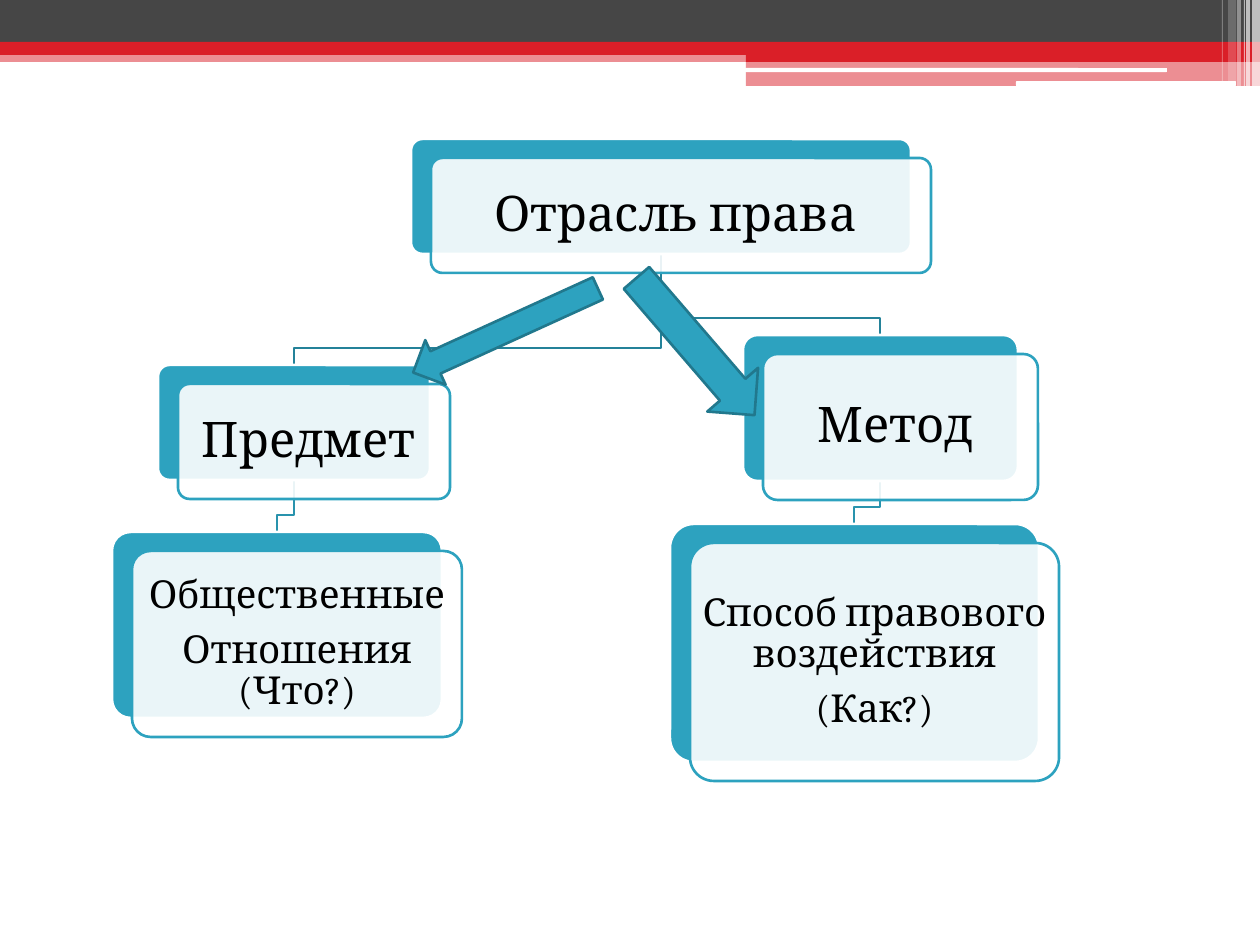
from lxml import etree
from pptx import Presentation
from pptx import util as u
from pptx.dml.color import RGBColor
from pptx.enum import shapes as sh, text as tx
from pptx.oxml.ns import qn

SCALE = 914400 / 126  # EMU per px
COLORS = {
    "white": "FFFFFF", "black": "000000", "gray": "464646", "red": "DA1F28",
    "teal": "2DA2BF", "arrow_edge": "21788D",
    "upper_link": "248299", "lower_link": "2993AD",
}
RECT = sh.MSO_SHAPE.RECTANGLE
ROUND = sh.MSO_SHAPE.ROUNDED_RECTANGLE
CORNER = 0.1
SHIFT_X, SHIFT_Y = 20, 19  # front panel of a card against its back panel
BEND = 17  # bend of a link above its child card


def px(n):
    return u.Emu(round(n * SCALE))


class Diagram:
    font = "Cambria"
    line_width = u.Pt(1.5)

    def __init__(self, slide):
        self.slide = slide

    def outline(self, shape, color):
        shape.line.color.rgb = RGBColor.from_string(COLORS[color])
        shape.line.width = self.line_width

    def block(self, kind, box, fill, edge=None, alpha=100, corner=None):
        shape = self.slide.shapes.add_shape(kind, *map(px, box))
        shape.shadow.inherit = False
        shape.fill.solid()
        shape.fill.fore_color.rgb = RGBColor.from_string(COLORS[fill])
        if alpha < 100:
            color = shape.fill._xPr.find(qn("a:solidFill"))[0]
            etree.SubElement(color, qn("a:alpha")).set("val", str(alpha * 1000))
        if edge:
            self.outline(shape, edge)
        else:
            shape.line.fill.background()
        if corner is not None:
            shape.adjustments[0] = corner
        return shape

    def card(self, box, words, size, inset):
        x, y, w, h = box
        self.block(ROUND, box, "teal", "white", corner=CORNER)
        panel = self.block(ROUND, (x + SHIFT_X, y + SHIFT_Y, w, h), "white", "teal", 90, CORNER)
        frame = panel.text_frame
        frame.word_wrap = True
        frame.vertical_anchor = tx.MSO_ANCHOR.MIDDLE
        # The rounded corner already insets the text area
        margin = px(inset - 0.29 * CORNER * h)
        frame.margin_left = frame.margin_right = margin
        frame.margin_top = frame.margin_bottom = margin
        frame.text = words
        for paragraph in frame.paragraphs:
            paragraph.alignment = tx.PP_ALIGN.CENTER
            paragraph.line_spacing = 0.9
            paragraph.space_after = u.Pt(round(0.35 * size, 1))
            for run in paragraph.runs:
                run.font.name = self.font
                run.font.size = u.Pt(size)
                run.font.color.rgb = RGBColor.from_string(COLORS["black"])

    def link(self, parent, child, color):
        start_x, start_y = parent[0] + parent[2] / 2, parent[1] + parent[3]
        end_x, end_y = child[0] + child[2] / 2, child[1]
        bend_y = end_y - BEND
        builder = self.slide.shapes.build_freeform(start_x, start_y, scale=SCALE)
        builder.add_line_segments(
            [(start_x, bend_y), (end_x, bend_y), (end_x, end_y)], close=False)
        elbow = builder.convert_to_shape()
        elbow.shadow.inherit = False
        elbow.fill.background()
        self.outline(elbow, color)

    def arrow(self, box, angle):
        self.block(sh.MSO_SHAPE.DOWN_ARROW, box, "teal", "arrow_edge").rotation = angle


def main():
    deck = Presentation()
    deck.slide_width, deck.slide_height = px(1260), px(945)
    diagram = Diagram(deck.slides.add_slide(deck.slide_layouts[6]))

    # Header bands
    for box, fill, alpha in (
        ((0, 51, 1260, 11), "red", 50),
        ((0, 0, 1260, 43), "gray", 100),
        ((0, 42, 1260, 13), "red", 100),
        ((746, 49, 514, 13), "red", 100),
        ((746, 62, 514, 24), "red", 50),
    ):
        diagram.block(RECT, box, fill, alpha=alpha)
    for box in ((745, 68, 422, 4), (1016, 81, 220, 5)):
        diagram.block(ROUND, box, "white", corner=0.17)

    # Pale stripes at the right end of the header
    for x, width, height, alpha in (
        (1252, 8, 86, 65), (1246, 4, 86, 65), (1244, 1, 86, 60),
        (1237, 4, 86, 40), (1228, 8, 81, 20), (1222, 1, 81, 30),
    ):
        diagram.block(RECT, (x, 0, width, height), "white", alpha=alpha)

    # Links between cards
    branch = (411, 139, 500, 115)
    subject = (158, 365, 272, 115)
    relations = (112, 532, 330, 186)
    method = (743, 335, 275, 146)
    influence = (670, 524, 369, 238)
    diagram.link(method, influence, "lower_link")
    diagram.link(branch, method, "upper_link")
    diagram.link(subject, relations, "lower_link")
    diagram.link(branch, subject, "upper_link")

    # Cards
    for box, words, size, inset in (
        (branch, "Отрасль права ", 28, 15),
        (subject, "Предмет ", 28, 15),
        (relations, "Общественные\nОтношения (Что?)", 22, 11),
        (method, "Метод ", 28, 15),
        (influence, "Способ правового воздействия\n(Как?)", 22, 11),
    ):
        diagram.card(box, words, size, inset)

    # Arrows from the branch to its two criteria
    diagram.arrow((662, 256, 67, 181), 319.3)
    diagram.arrow((481, 229, 49, 203), 65.5)

    deck.save("out.pptx")


if __name__ == "__main__":
    main()
